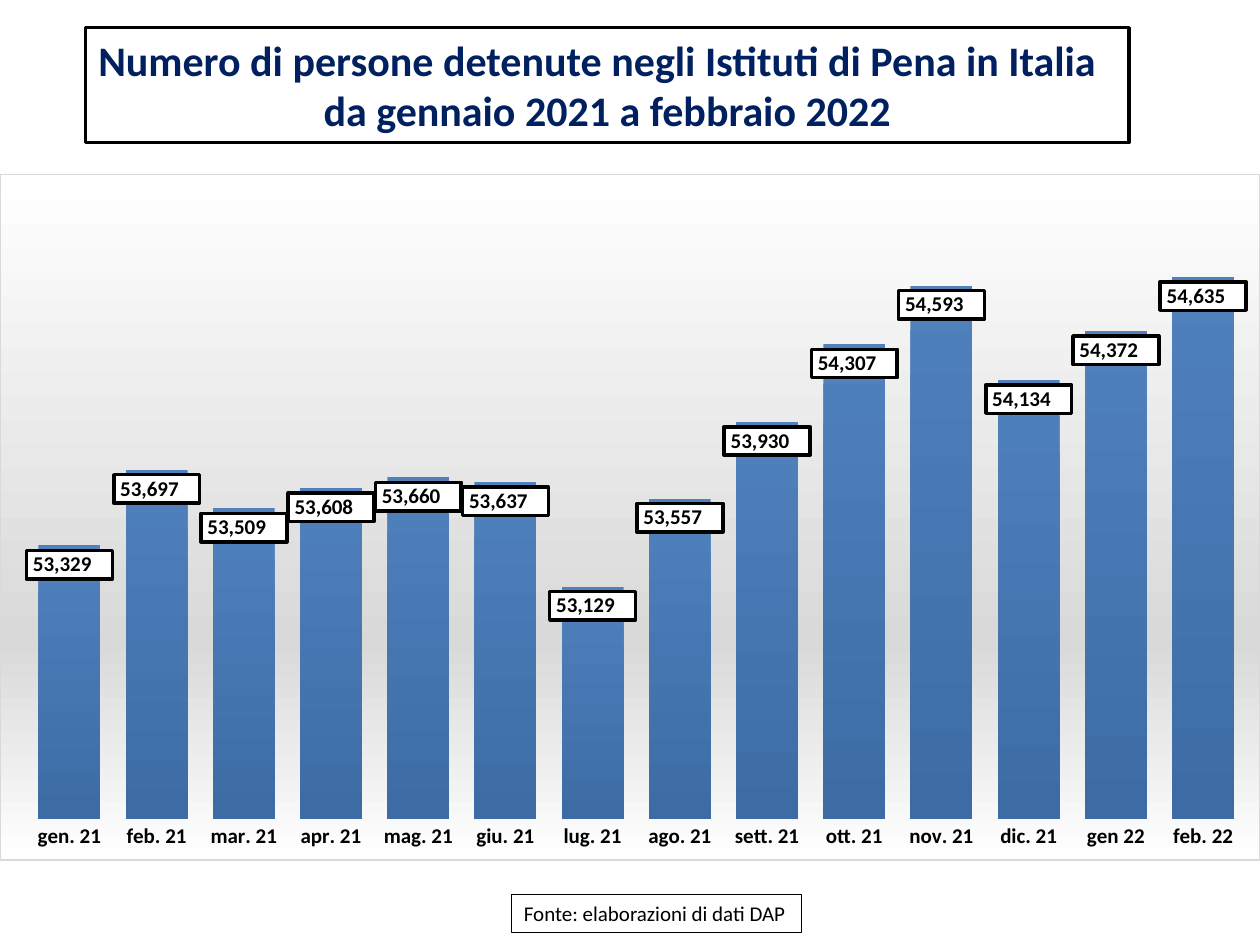
from dataclasses import dataclass

from lxml import etree
from pptx import Presentation
from pptx.chart.data import CategoryChartData
from pptx.dml.color import RGBColor
from pptx.enum.chart import XL_CHART_TYPE as ChartType
from pptx.enum.chart import XL_LABEL_POSITION as LabelPosition
from pptx.enum.chart import XL_TICK_MARK as TickMark
from pptx.enum.text import MSO_ANCHOR as Anchor
from pptx.enum.text import MSO_AUTO_SIZE as AutoSize
from pptx.enum.text import PP_ALIGN as Align
from pptx.oxml import parse_xml
from pptx.oxml.ns import nsdecls, qn
from pptx.util import Inches, Pt


@dataclass(frozen=True)
class Theme:
    font: str = "Calibri"
    navy: str = "002060"
    black: str = "000000"
    white: str = "FFFFFF"
    grey: str = "D9D9D9"
    bar_top: str = "4F81BD"
    bar_bottom: str = "3D6CA4"
    title_size: int = 24
    body_size: int = 12


NUMBER_FORMAT = r'_-* #,##0\ _€_-;\-* #,##0\ _€_-;_-* "-"?'

MONTHLY_DETAINEES = {
    "gen. 21": 53329,
    "feb. 21": 53697,
    "mar. 21": 53509,
    "apr. 21": 53608,
    "mag. 21": 53660,
    "giu. 21": 53637,
    "lug. 21": 53129,
    "ago. 21": 53557,
    "sett. 21": 53930,
    "ott. 21": 54307,
    "nov. 21": 54593,
    "dic. 21": 54134,
    "gen 22": 54372,
    "feb. 22": 54635,
}


def set_values(target, values):
    for name, value in values.items():
        setattr(target, name, value)


def solid(color):
    return f'<a:solidFill><a:srgbClr val="{color}"/></a:solidFill>'


def vertical_gradient(stops):
    marks = "".join(
        f'<a:gs pos="{position * 1000}"><a:srgbClr val="{color}"/></a:gs>'
        for position, color in stops
    )
    return (
        f'<a:gradFill rotWithShape="1"><a:gsLst>{marks}</a:gsLst>'
        '<a:lin ang="5400000" scaled="0"/></a:gradFill>'
    )


def chart_format(fill, line_color=None, line_width=0):
    line = "<a:ln><a:noFill/></a:ln>"
    if line_color:
        line = f'<a:ln w="{Pt(line_width)}">{solid(line_color)}</a:ln>'
    return parse_xml(f'<c:spPr {nsdecls("c", "a")}>{fill}{line}</c:spPr>')


class SlideBuilder:
    def __init__(self, slide, theme):
        self.slide = slide
        self.theme = theme

    def style_font(self, font, size, color, bold=False):
        values = {"name": self.theme.font, "size": Pt(size), "bold": bold}
        set_values(font, values)
        font.color.rgb = RGBColor.from_string(color)

    def frame(self, shape, box, line_width):
        places = map(Inches, box)
        set_values(shape, dict(zip(("left", "top", "width", "height"), places)))
        shape.fill.solid()
        shape.fill.fore_color.rgb = RGBColor.from_string(self.theme.white)
        shape.line.color.rgb = RGBColor.from_string(self.theme.black)
        shape.line.width = Pt(line_width)

    def set_text(self, shape, lines, size, color, bold, wrap):
        text_frame = shape.text_frame
        text_frame.text = "\n".join(text for text, _ in lines)
        set_values(text_frame, {
            "word_wrap": wrap,
            "auto_size": AutoSize.SHAPE_TO_FIT_TEXT,
            "vertical_anchor": Anchor.TOP,
        })
        for paragraph, (_, alignment) in zip(text_frame.paragraphs, lines):
            paragraph.alignment = alignment
            self.style_font(paragraph.font, size, color, bold)

    def title(self, lines, box):
        shape = self.slide.shapes.title
        self.frame(shape, box, 2)
        self.set_text(shape, lines, self.theme.title_size, self.theme.navy, True, True)

    def source_note(self, text, box):
        shape = self.slide.shapes.add_textbox(*map(Inches, box))
        self.frame(shape, box, 0.75)
        lines = [(text, Align.LEFT)]
        self.set_text(shape, lines, self.theme.body_size, self.theme.black, False, False)

    def column_chart(self, values, box, plot_box, limits):
        theme = self.theme
        data = CategoryChartData()
        data.categories = list(values)
        data.add_series("Series 1", list(values.values()))
        chart = self.slide.shapes.add_chart(
            ChartType.COLUMN_CLUSTERED, *map(Inches, box), data
        ).chart
        set_values(chart, {"has_legend": False, "has_title": False})
        self.style_font(chart.font, theme.body_size, theme.black)

        background = vertical_gradient(
            [(0, theme.white), (68, theme.grey), (100, theme.white)]
        )
        chart_space = chart._chartSpace
        chart_space.find(qn("c:chart")).addnext(
            chart_format(background, theme.grey, 0.75)
        )
        self.place_plot(chart_space, plot_box)

        category_axis = chart.category_axis
        category_axis.major_tick_mark = TickMark.NONE
        category_axis.format.line.fill.background()
        self.style_font(
            category_axis.tick_labels.font, theme.body_size, theme.black, True
        )
        minimum, maximum = limits
        set_values(chart.value_axis, {
            "minimum_scale": minimum,
            "maximum_scale": maximum,
            "has_major_gridlines": False,
            "visible": False,
        })

        plot = chart.plots[0]
        set_values(plot, {"gap_width": 41, "vary_by_categories": False})
        series = plot.series[0]
        bars = vertical_gradient([(0, theme.bar_top), (100, theme.bar_bottom)])
        bar_format = series.format._element.get_or_add_spPr()
        bar_format.getparent().replace(bar_format, chart_format(bars))
        self.label_bars(series.data_labels)

    def place_plot(self, chart_space, plot_box):
        plot_area = chart_space.find(".//" + qn("c:plotArea"))
        for old_layout in plot_area.findall(qn("c:layout")):
            plot_area.remove(old_layout)
        layout = parse_xml(f'<c:layout {nsdecls("c")}><c:manualLayout/></c:layout>')
        entries = [("layoutTarget", "inner"), ("xMode", "edge"), ("yMode", "edge")]
        entries += zip("xywh", plot_box)
        for name, value in entries:
            etree.SubElement(layout[0], qn(f"c:{name}")).set("val", str(value))
        plot_area.insert(0, layout)

    def label_bars(self, labels):
        set_values(labels, {
            "show_value": True,
            "number_format": NUMBER_FORMAT,
            "number_format_is_linked": False,
            "position": LabelPosition.INSIDE_END,
        })
        theme = self.theme
        self.style_font(labels.font, theme.body_size, theme.black, True)
        labels._element.find(qn("c:numFmt")).addnext(
            chart_format(solid(theme.white), theme.black, 2)
        )


def main():
    presentation = Presentation()
    presentation.slide_width = Inches(10)
    presentation.slide_height = Inches(7.5)
    slide = presentation.slides.add_slide(presentation.slide_layouts[5])
    builder = SlideBuilder(slide, Theme())
    builder.title(
        [
            ("Numero di persone detenute negli Istituti di Pena in Italia", Align.LEFT),
            ("da gennaio 2021 a febbraio 2022", Align.CENTER),
        ],
        (0.68, 0.22, 8.28, 0.91),
    )
    builder.source_note("Fonte: elaborazioni di dati DAP", (4.06, 7.1, 2.3, 0.3))
    builder.column_chart(
        MONTHLY_DETAINEES,
        box=(0, 1.38, 10, 5.45),
        plot_box=(0.02, 0.04, 0.97, 0.9),
        limits=(52000, 55000),
    )
    presentation.save("out.pptx")


if __name__ == "__main__":
    main()
